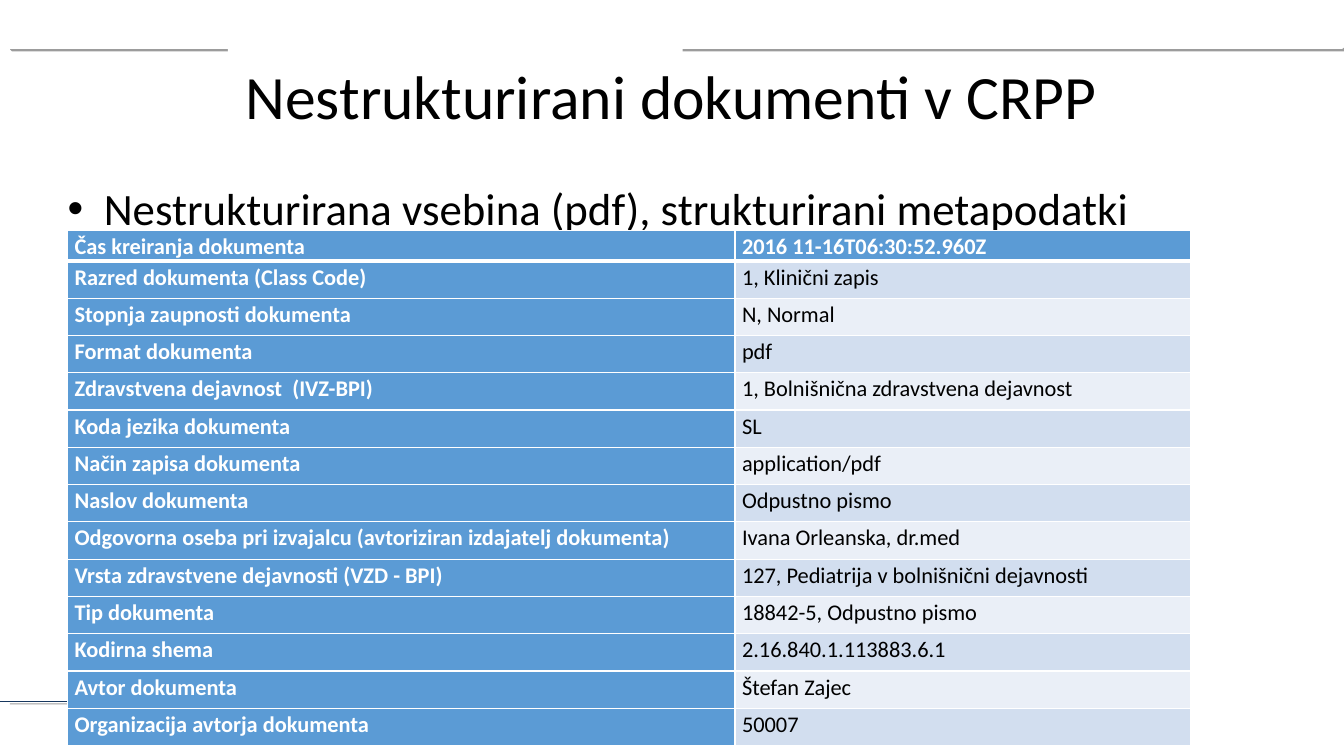
from lxml.etree import SubElement
from pptx import Presentation
from pptx.dml.color import RGBColor
from pptx.enum.shapes import MSO_CONNECTOR as Connector, MSO_SHAPE as Shape
from pptx.enum.text import MSO_ANCHOR as Anchor, MSO_AUTO_SIZE as AutoSize, PP_ALIGN as Align
from pptx.oxml.ns import qn
from pptx.util import Inches, Pt

COLORS = {"paper": "FFFFFF", "ink": "000000", "rule": "17375E",
          "label": "5B9BD5", "odd": "D2DEEF", "even": "EAEFF7"}
LEFT = 0.67
COLUMNS = [6.62, 4.52]
HEADER_HEIGHT, ROW_HEIGHT = 0.26, 0.37

METADATA = [
    ("Čas kreiranja dokumenta", "2016 11-16T06:30:52.960Z"),
    ("Razred dokumenta (Class Code)", "1, Klinični zapis"),
    ("Stopnja zaupnosti dokumenta", "N, Normal"),
    ("Format dokumenta", "pdf"),
    ("Zdravstvena dejavnost  (IVZ-BPI)", "1, Bolnišnična zdravstvena dejavnost"),
    ("Koda jezika dokumenta", "SL"),
    ("Način zapisa dokumenta", "application/pdf"),
    ("Naslov dokumenta", "Odpustno pismo"),
    ("Odgovorna oseba pri izvajalcu (avtoriziran izdajatelj dokumenta)",
     "Ivana Orleanska, dr.med"),
    ("Vrsta zdravstvene dejavnosti (VZD - BPI)",
     "127, Pediatrija v bolnišnični dejavnosti"),
    ("Tip dokumenta", "18842-5, Odpustno pismo"),
    ("Kodirna shema", "2.16.840.1.113883.6.1"),
    ("Avtor dokumenta", "Štefan Zajec"),
    ("Organizacija avtorja dokumenta", "50007"),
]


def color(name):
    return RGBColor.from_string(COLORS[name])


def write(frame, text, size, ink="ink", bold=False, spacing=1.06, align=Align.LEFT):
    frame.text = text
    paragraph = frame.paragraphs[0]
    formats = {"alignment": align, "line_spacing": spacing, "space_before": Pt(0)}
    for key, value in formats.items():
        setattr(paragraph, key, value)
    font = paragraph.runs[0].font
    for key, value in {"name": "Calibri", "size": Pt(size), "bold": bold}.items():
        setattr(font, key, value)
    font.color.rgb = color(ink)
    return paragraph


deck = Presentation()
deck.slide_width, deck.slide_height = Inches(13.33), Inches(7.5)
slide = deck.slides.add_slide(deck.slide_layouts[1])
shapes = slide.shapes
title, body = shapes.title, slide.placeholders[1]

# Top band with a gap, and the footer rule
band, gap = [shapes.add_shape(Shape.RECTANGLE, *map(Inches, box))
             for box in ((0, 0.01, 13.31, 0.46), (2.26, 0.13, 4.51, 0.79))]
for panel in (band, gap):
    panel.shadow.inherit = False
    panel.fill.solid()
    panel.fill.fore_color.rgb = color("paper")
band.line.color.rgb = color("paper")
band.line.width = Pt(2.5)
gap.line.fill.background()

footer_rule = shapes.add_connector(Connector.STRAIGHT, *map(Inches, (1.75, 6.96, -0.02, 6.96)))
footer_rule.line.color.rgb = color("rule")
footer_rule.line.width = Pt(0.75)
SubElement(footer_rule.element.spPr, qn("a:effectLst"))

# Hard offset shadows of the band and the rule
for part in (band, footer_rule):
    effects = part.element.spPr.find(qn("a:effectLst"))
    shadow = SubElement(effects, qn("a:outerShdw"), blurRad="0", dist=str(Pt(8.7)),
                        dir=str(11 * 60000), algn="ctr", rotWithShape="0")
    shade = SubElement(shadow, qn("a:srgbClr"), val=COLORS["ink"])
    SubElement(shade, qn("a:alpha"), val="38000")

# Title and bullet, brought in front of the band
for holder, box, anchor in ((title, (LEFT, 0.3, 11.98, 1.24), Anchor.MIDDLE),
                            (body, (LEFT, 1.76, 10.63, 0.79), Anchor.TOP)):
    holder.left, holder.top, holder.width, holder.height = map(Inches, box)
    frame_formats = {"margin_left": 0, "margin_top": 0, "margin_right": 0, "margin_bottom": 0,
                     "vertical_anchor": anchor, "word_wrap": True, "auto_size": AutoSize.NONE}
    for key, value in frame_formats.items():
        setattr(holder.text_frame, key, value)
    holder.element.getparent().append(holder.element)

write(title.text_frame, "Nestrukturirani dokumenti v CRPP", 44, align=Align.CENTER)
bullet = write(body.text_frame, "Nestrukturirana vsebina (pdf), strukturirani metapodatki", 32)
bullet_format = bullet._p.get_or_add_pPr()
bullet_format.set("marL", str(Inches(0.36)))
bullet_format.set("indent", str(Inches(-0.36)))
SubElement(bullet_format, qn("a:buChar"), char="•")

# Metadata table
table_height = HEADER_HEIGHT + ROW_HEIGHT * (len(METADATA) - 1)
table = shapes.add_table(len(METADATA), len(COLUMNS), Inches(LEFT), Inches(2.29),
                         Inches(sum(COLUMNS)), Inches(table_height)).table
for column, width in zip(table.columns, COLUMNS):
    column.width = Inches(width)

for r, entry in enumerate(METADATA):
    table.rows[r].height = Inches(ROW_HEIGHT if r else HEADER_HEIGHT)
    for c, text in enumerate(entry):
        cell = table.cell(r, c)
        is_label = r == 0 or c == 0
        margins = {"margin_left": Inches(0.07), "margin_right": Inches(0.07),
                   "margin_top": 0, "margin_bottom": 0}
        for key, value in margins.items():
            setattr(cell, key, value)
        write(cell.text_frame, text, 16, "paper" if is_label else "ink", is_label, 1.1)

        # White borders, thicker under the header
        cell_format = cell._tc.get_or_add_tcPr()
        for side in "LRTB":
            thick = (r, side) in ((0, "B"), (1, "T"))
            border = SubElement(cell_format, qn("a:ln" + side), w=str(Pt(3 if thick else 1)))
            SubElement(SubElement(border, qn("a:solidFill")), qn("a:srgbClr"), val=COLORS["paper"])
        cell.fill.solid()
        cell.fill.fore_color.rgb = color("label" if is_label else "odd" if r % 2 else "even")

deck.save("out.pptx")
